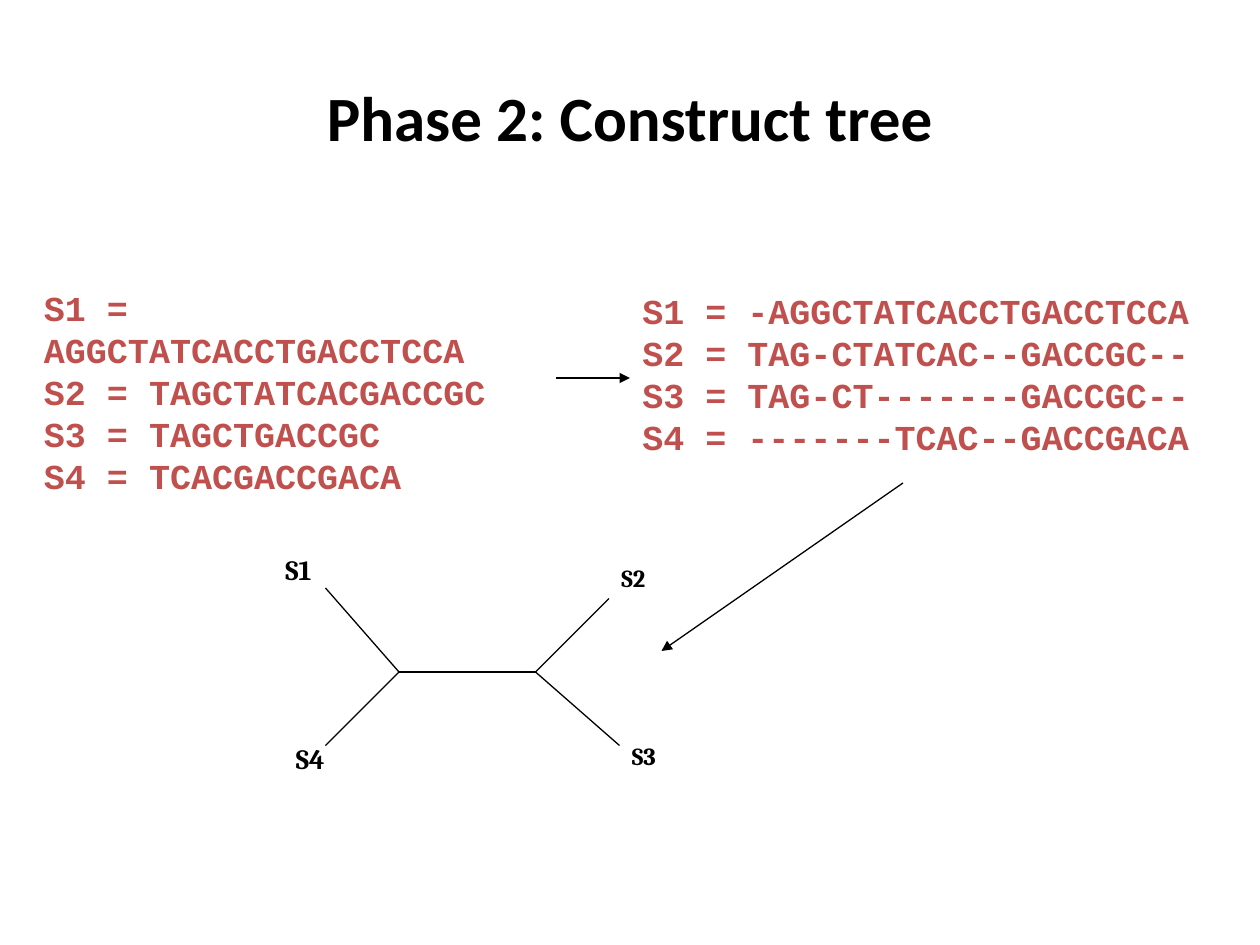
from dataclasses import dataclass

from lxml.etree import SubElement
from pptx import Presentation
from pptx.dml.color import RGBColor
from pptx.enum.shapes import MSO_CONNECTOR
from pptx.enum.text import MSO_ANCHOR, MSO_AUTO_SIZE, PP_ALIGN
from pptx.oxml.ns import qn
from pptx.util import Pt


@dataclass(frozen=True)
class Theme:
    ink: RGBColor = RGBColor(0x00, 0x00, 0x00)
    accent: RGBColor = RGBColor(0xC0, 0x50, 0x4D)
    title_font: str = "Calibri"
    sequence_font: str = "Courier New"
    label_font: str = "Cambria"
    title_size: int = 36
    sequence_size: int = 20
    large_label: int = 16
    small_label: int = 14
    line_width: float = 0.75


THEME = Theme()

SEQUENCES = [
    "S1 = AGGCTATCACCTGACCTCCA",
    "S2 = TAGCTATCACGACCGC",
    "S3 = TAGCTGACCGC",
    "S4 = TCACGACCGACA",
]
ALIGNMENT = [
    "S1 = -AGGCTATCACCTGACCTCCA",
    "S2 = TAG-CTATCAC--GACCGC--",
    "S3 = TAG-CT-------GACCGC--",
    "S4 = -------TCAC--GACCGACA",
]

LEFT_NODE, RIGHT_NODE = (228, 384), (306, 384)
# name, inner node, branch tip, label box, label size
LEAVES = [
    ("S1", LEFT_NODE, (186, 336), (156, 312, 42, 26.5), THEME.large_label),
    ("S4", LEFT_NODE, (186, 426), (162, 420, 42, 26.5), THEME.large_label),
    ("S2", RIGHT_NODE, (348, 342), (348, 318, 42, 24), THEME.small_label),
    ("S3", RIGHT_NODE, (354, 426), (354, 420, 42, 24), THEME.small_label),
]


def add_text(s, box, lines, font, size, color, align=PP_ALIGN.LEFT, **frame):
    tf = s.shapes.add_textbox(*map(Pt, box)).text_frame
    frame_format = {"word_wrap": True, "vertical_anchor": MSO_ANCHOR.TOP,
                    "auto_size": MSO_AUTO_SIZE.SHAPE_TO_FIT_TEXT, **frame}
    for name, value in frame_format.items():
        setattr(tf, name, value)
    for i, line in enumerate(lines):
        p = tf.add_paragraph() if i else tf.paragraphs[0]
        p.alignment = align
        r = p.add_run()
        r.text = line
        for name, value in {"name": font, "size": Pt(size), "bold": True}.items():
            setattr(r.font, name, value)
        r.font.color.rgb = color


def add_line(s, start, end, arrow=False):
    line = s.shapes.add_connector(MSO_CONNECTOR.STRAIGHT, *map(Pt, start + end))
    line.line.width = Pt(THEME.line_width)
    line.line.color.rgb = THEME.ink
    if arrow:
        SubElement(line.line._get_or_add_ln(), qn("a:tailEnd"), type="triangle")
    SubElement(line._element.spPr, qn("a:effectLst"))


def add_sequences(s, box, lines):
    add_text(s, box, lines, THEME.sequence_font, THEME.sequence_size, THEME.accent)


def add_tree(s):
    add_line(s, LEFT_NODE, RIGHT_NODE)
    for name, node, tip, box, size in LEAVES:
        add_line(s, node, tip)
        add_text(s, box, [name], THEME.label_font, size, THEME.ink)


def main():
    prs = Presentation()
    prs.slide_width, prs.slide_height = Pt(720), Pt(540)
    s = prs.slides.add_slide(prs.slide_layouts[6])

    add_text(s, (36, 21.6, 648, 90), ["Phase 2: Construct tree"],
             THEME.title_font, THEME.title_size, THEME.ink, PP_ALIGN.CENTER,
             vertical_anchor=MSO_ANCHOR.MIDDLE, auto_size=MSO_AUTO_SIZE.NONE)
    add_sequences(s, (360, 162, 330, 103), ALIGNMENT)
    add_sequences(s, (18, 160, 314, 103), SEQUENCES)
    add_line(s, (318, 216), (360, 216), arrow=True)
    add_tree(s)
    add_line(s, (516, 276), (378, 372), arrow=True)

    prs.save("out.pptx")


if __name__ == "__main__":
    main()
